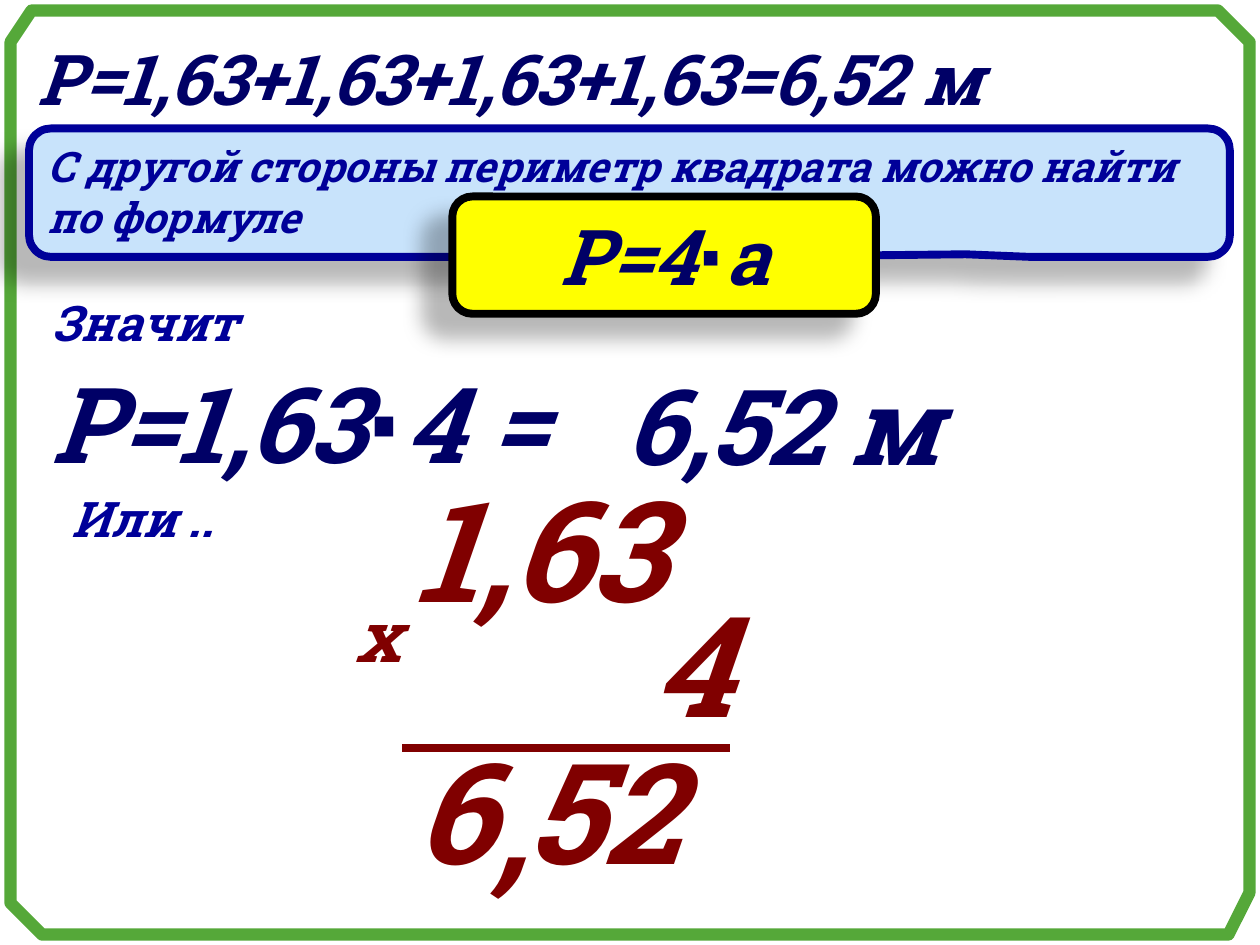
import pptx
import pptx.util
import pptx.oxml
import pptx.oxml.ns
import pptx.dml.color
import pptx.enum.shapes
import pptx.enum.text

Pt = pptx.util.Pt
SHAPE = pptx.enum.shapes.MSO_SHAPE
ALIGN = pptx.enum.text.PP_ALIGN
ANCHOR = pptx.enum.text.MSO_ANCHOR

FONT = "Roboto Slab"
COLOURS = {
    "formula": "000066",
    "comment": "000099",
    "column": "800000",
    "frame": "55A839",
    "callout": "C8E3FB",
    "highlight": "FFFF00",
    "outline": "000000",
}


def rgb(name):
    return pptx.dml.color.RGBColor.from_string(COLOURS[name])


def write(shape, text, size, colour, align=ALIGN.LEFT, anchor=ANCHOR.TOP):
    frame = shape.text_frame
    frame.text = text
    frame.word_wrap = True
    frame.auto_size = pptx.enum.text.MSO_AUTO_SIZE.NONE
    frame.vertical_anchor = anchor
    paragraph = frame.paragraphs[0]
    paragraph.alignment = align
    font = paragraph.runs[0].font
    font.name, font.size = FONT, Pt(size)
    font.bold = font.italic = True
    font.color.rgb = rgb(colour)


def place(shape, box):
    shape.left, shape.top, shape.width, shape.height = map(Pt, box)


def add_text(slide, box, text, size, colour):
    write(slide.shapes.add_textbox(*map(Pt, box)), text, size, colour)


def add_panel(slide, kind, box, fill, outline, adjustments):
    """Add a filled, outlined shape with a soft shadow to its lower left."""
    panel = slide.shapes.add_shape(kind, *map(Pt, box))
    for index, value in enumerate(adjustments):
        panel.adjustments[index] = value
    panel.fill.solid()
    panel.fill.fore_color.rgb = rgb(fill)
    panel.line.color.rgb = rgb(outline)
    panel.line.width = Pt(4.5)
    panel.shadow.inherit = False
    effects = panel.element.spPr.find(pptx.oxml.ns.qn("a:effectLst"))
    effects.append(pptx.oxml.parse_xml(
        f'<a:outerShdw {pptx.oxml.ns.nsdecls("a")} blurRad="{Pt(11.8)}" '
        f'dist="{Pt(19.7)}" dir="{141 * 60000}" algn="ctr" rotWithShape="0">'
        '<a:srgbClr val="000000"><a:alpha val="28000"/></a:srgbClr>'
        '</a:outerShdw>'))
    return panel


def add_frame(slide):
    corners = [(6, 516), (24, 534), (702, 534), (714, 510),
               (714, 24), (696, 6), (18, 6)]
    builder = slide.shapes.build_freeform(6, 24, scale=Pt(1))
    builder.add_line_segments(corners, close=True)
    frame = builder.convert_to_shape()
    frame.fill.background()
    frame.line.color.rgb = rgb("frame")
    frame.line.width = Pt(7)
    frame.shadow.inherit = False


def add_sum_line(slide):
    rule = slide.shapes.add_connector(
        pptx.enum.shapes.MSO_CONNECTOR.STRAIGHT,
        Pt(230), Pt(427.5), Pt(417), Pt(427.5))
    rule.line.color.rgb = rgb("column")
    rule.line.width = Pt(4.5)
    rule.element.spPr.append(pptx.oxml.parse_xml(
        f'<a:effectLst {pptx.oxml.ns.nsdecls("a")}/>'))


def add_column_multiplication(slide):
    for box, text, size in [
        ((229.7, 260.6, 266, 103), "1,63", 80),
        ((365.8, 326.2, 73.4, 103), "4", 80),
        ((195.8, 334.8, 51, 55.4), "х", 40),
        ((229.7, 410.4, 242.6, 104.4), "6 52", 80),
        ((275, 416.2, 67.7, 103), ",", 80),
    ]:
        add_text(slide, box, text, size, "column")
    add_sum_line(slide)


def main():
    deck = pptx.Presentation()
    deck.slide_width, deck.slide_height = Pt(720), Pt(540)
    slide = deck.slides.add_slide(deck.slide_layouts[5])

    title = slide.shapes.title
    place(title, (14.4, 16.6, 705.6, 55.4))
    write(title, "Р=1,63+1,63+1,63+1,63=6,52 м", 40, "formula")

    add_text(slide, (22.3, 201.6, 424, 80), "Р=1,63∙4 =", 60, "formula")
    add_text(slide, (350, 202.3, 296, 80), "6,52 м", 60, "formula")
    add_column_multiplication(slide)
    add_frame(slide)

    callout = add_panel(slide, SHAPE.ROUNDED_RECTANGULAR_CALLOUT,
                        (16.6, 73.4, 686.2, 73.4), "callout", "comment",
                        (0.28, 0.48, 0.17))
    write(callout, "С другой стороны периметр квадрата можно найти по формуле",
          24, "comment")
    rule = add_panel(slide, SHAPE.ROUNDED_RECTANGLE,
                     (258.5, 112.3, 242, 67), "highlight", "outline", (0.17,))
    write(rule, "Р=4∙а", 44, "formula", ALIGN.CENTER, ANCHOR.MIDDLE)

    add_text(slide, (22.3, 163.4, 137.5, 41), "Значит", 28, "comment")
    add_text(slide, (33.8, 275.8, 105, 41), "Или ..", 28, "comment")
    deck.save("out.pptx")


if __name__ == "__main__":
    main()
